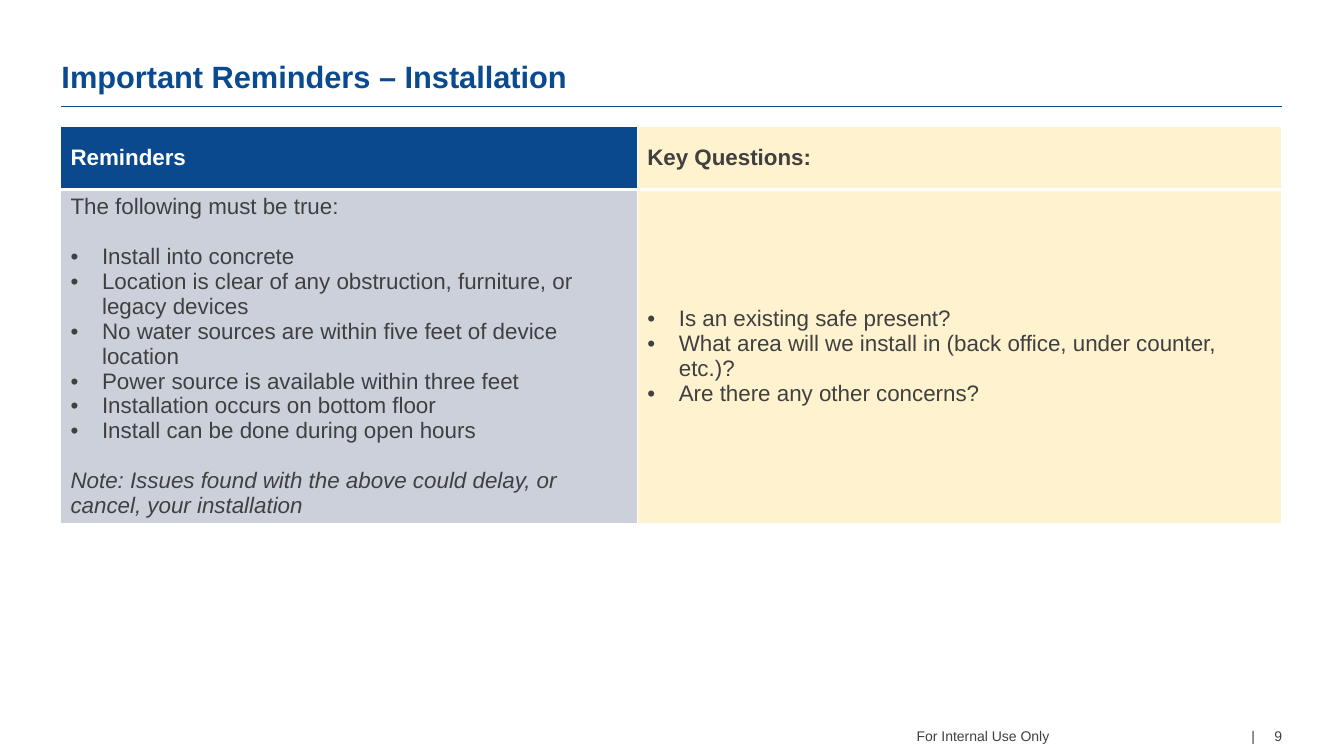
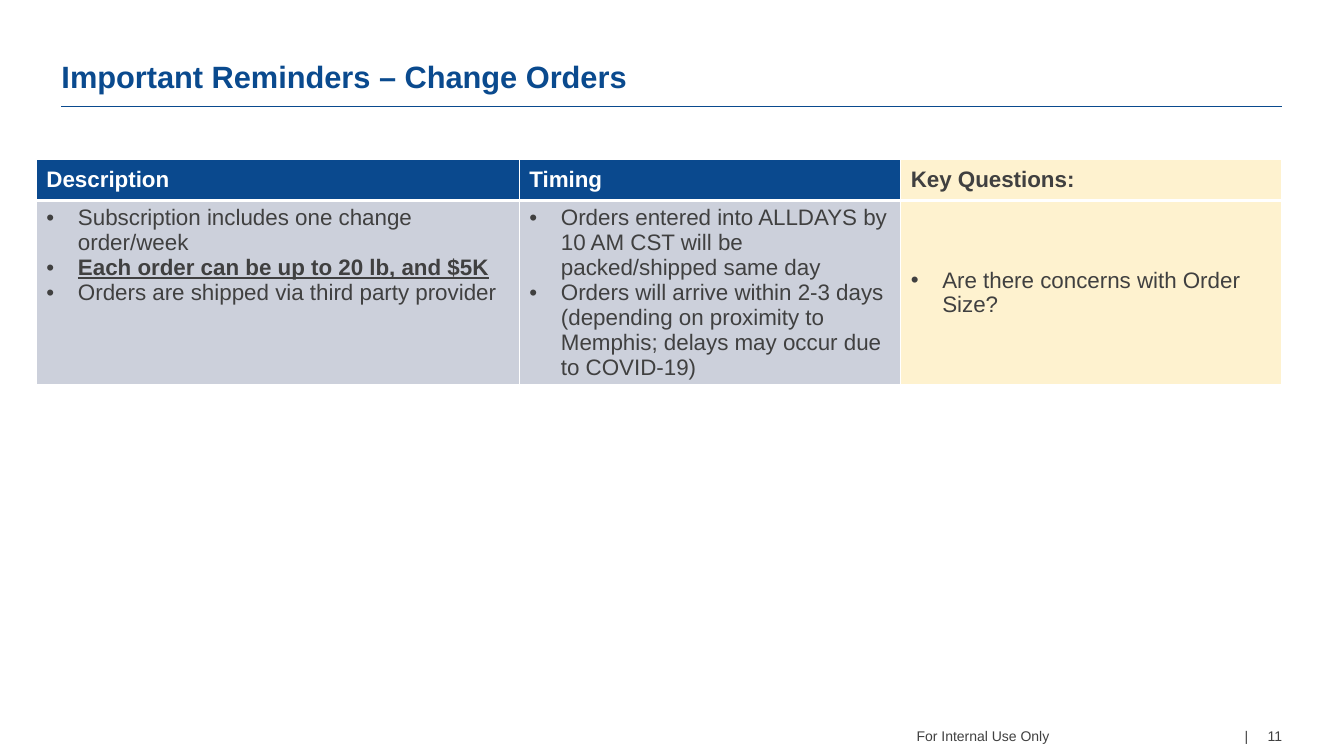
from lxml.etree import SubElement
from pptx import Presentation
from pptx.dml.color import RGBColor
from pptx.enum.shapes import MSO_CONNECTOR as Connector
from pptx.enum.text import MSO_ANCHOR as Anchor, MSO_AUTO_SIZE as AutoSize, PP_ALIGN as Align
from pptx.oxml.ns import qn
from pptx.util import Pt

BLUE, HEADER, GREY, CREAM = "0A4A8E", "0A498E", "CCD0DB", "FEF2CF"
DARK, WHITE = "404040", "FFFFFF"
LEFT, WIDTH = 43.9, 872
LINE = 17.9
INDENT = 22.5

KINDS = {
    "plain": {},
    "bullet": {"bullet": True},
    "first": {"bullet": True, "before": LINE},
    "strong": {"bullet": True, "font": {"bold": True, "underline": True}},
    "note": {"before": LINE, "font": {"italic": True}},
}


def color(value):
    return RGBColor.from_string(value)


def apply(target, values):
    for name, value in values.items():
        setattr(target, name, value)


class Deck:
    """Holds the shared style and the page being built."""

    def __init__(self):
        self.deck = Presentation()
        apply(self.deck, {"slide_width": Pt(960), "slide_height": Pt(540)})
        self.page = None

    def add_page(self, title, number):
        self.page = self.deck.slides.add_slide(self.deck.slide_layouts[5])
        self.title(title)
        self.rule()
        self.footer(538.6, 519, 327, 12.4, Align.CENTER, ["For Internal Use Only"])
        bar, gap, page_number = self.footer(863.3, 517, 52.6, 14.4, Align.RIGHT, ["|", " ", number])
        gap.font._element.set("spc", "1110")

    def place(self, box, left, top, width, height):
        apply(box, {"left": Pt(left), "top": Pt(top), "width": Pt(width), "height": Pt(height)})
        apply(box.text_frame, {
            "word_wrap": True, "auto_size": AutoSize.NONE, "vertical_anchor": Anchor.BOTTOM,
            "margin_left": 0, "margin_top": 0, "margin_right": 0, "margin_bottom": 0,
        })
        return box.text_frame.paragraphs[0]

    def add_span(self, para, text, size, shade, **font):
        span = para.add_run()
        span.text = text
        apply(span.font, {"name": "Arial", "size": Pt(size), "bold": False, **font})
        span.font.color.rgb = color(shade)
        return span

    def title(self, text):
        para = self.place(self.page.shapes.title, LEFT, 43.9, WIDTH, 23.8)
        apply(para, {"alignment": Align.LEFT, "line_spacing": 0.9})
        self.add_span(para, text, 22, BLUE, bold=True)

    def rule(self):
        line = self.page.shapes.add_connector(
            Connector.STRAIGHT, Pt(LEFT), Pt(75.6), Pt(LEFT + WIDTH), Pt(75.6))
        line.line.width = Pt(0.25)
        line.line.color.rgb = color(BLUE)
        SubElement(line._element.spPr, qn("a:effectLst"))

    def footer(self, left, top, width, height, alignment, texts):
        box = self.page.shapes.add_textbox(0, 0, 0, 0)
        para = self.place(box, left, top, width, height)
        para.alignment = alignment
        return [self.add_span(para, text, 10, DARK) for text in texts]

    def borders(self, cell, bottom):
        properties = cell._tc.get_or_add_tcPr()
        for side, width in (("L", 1), ("R", 1), ("T", 1), ("B", bottom)):
            edge = SubElement(properties, qn(f"a:ln{side}"), w=str(Pt(width)))
            SubElement(SubElement(edge, qn("a:solidFill")), qn("a:srgbClr"), val=WHITE)

    def bullet(self, para):
        properties = para._p.get_or_add_pPr()
        properties.set("marL", str(Pt(INDENT)))
        properties.set("indent", str(-Pt(INDENT)))
        SubElement(properties, qn("a:buFont"), typeface="Arial")
        SubElement(properties, qn("a:buChar"), char="•")

    def cell(self, cell, fill, bottom, anchor=Anchor.MIDDLE):
        self.borders(cell, bottom)
        cell.fill.solid()
        cell.fill.fore_color.rgb = color(fill)
        cell.vertical_anchor = anchor

    def table(self, left, top, widths, heights, columns):
        frame = self.page.shapes.add_table(
            2, len(columns), Pt(left), Pt(top), Pt(sum(widths)), Pt(sum(heights)))
        grid = frame.table
        for row, height in zip(grid.rows, heights):
            row.height = Pt(height)
        for index, (heading, items, anchor) in enumerate(columns):
            grid.columns[index].width = Pt(widths[index])
            question = index == len(columns) - 1
            head, body = grid.cell(0, index), grid.cell(1, index)
            self.cell(head, CREAM if question else HEADER, 3)
            self.add_span(head.text_frame.paragraphs[0], heading, 16,
                          DARK if question else WHITE, bold=True)
            self.cell(body, CREAM if question else GREY, 1, anchor)
            self.items(body.text_frame, items)

    def items(self, frame, items):
        for index, (kind, text) in enumerate(items):
            para = frame.add_paragraph() if index else frame.paragraphs[0]
            style = KINDS[kind]
            para.space_before = Pt(style.get("before", 0))
            if style.get("bullet"):
                self.bullet(para)
            self.add_span(para, text, 16, DARK, **style.get("font", {}))


def main():
    deck = Deck()
    deck.add_page("Important Reminders – Installation", "9")
    deck.table(43.2, 90, [412, 460], [45.4, 237], [
        ("Reminders", [
            ("plain", "The following must be true:"),
            ("first", "Install into concrete"),
            ("bullet", "Location is clear of any obstruction, furniture, or legacy devices"),
            ("bullet", "No water sources are within five feet of device location"),
            ("bullet", "Power source is available within three feet"),
            ("bullet", "Installation occurs on bottom floor"),
            ("bullet", "Install can be done during open hours"),
            ("note", "Note: Issues found with the above could delay, or cancel, your installation"),
        ], Anchor.MIDDLE),
        ("Key Questions:", [
            ("bullet", "Is an existing safe present?"),
            ("bullet", "What area will we install in (back office, under counter, etc.)?"),
            ("bullet", "Are there any other concerns?"),
        ], Anchor.MIDDLE),
    ])

    deck.add_page("Important Reminders – Change Orders", "11")
    deck.table(26, 113.8, [345, 272.4, 272.4], [29.5, 131], [
        ("Description", [
            ("bullet", "Subscription includes one change order/week"),
            ("strong", "Each order can be up to 20 lb, and $5K"),
            ("bullet", "Orders are shipped via third party provider"),
        ], Anchor.TOP),
        ("Timing", [
            ("bullet", "Orders entered into ALLDAYS by 10 AM CST will be packed/shipped same day"),
            ("bullet", "Orders will arrive within 2-3 days (depending on proximity to Memphis; "
                       "delays may occur due to COVID-19)"),
        ], Anchor.MIDDLE),
        ("Key Questions:", [
            ("bullet", "Are there concerns with Order Size?"),
        ], Anchor.MIDDLE),
    ])
    deck.deck.save("out.pptx")


if __name__ == "__main__":
    main()
